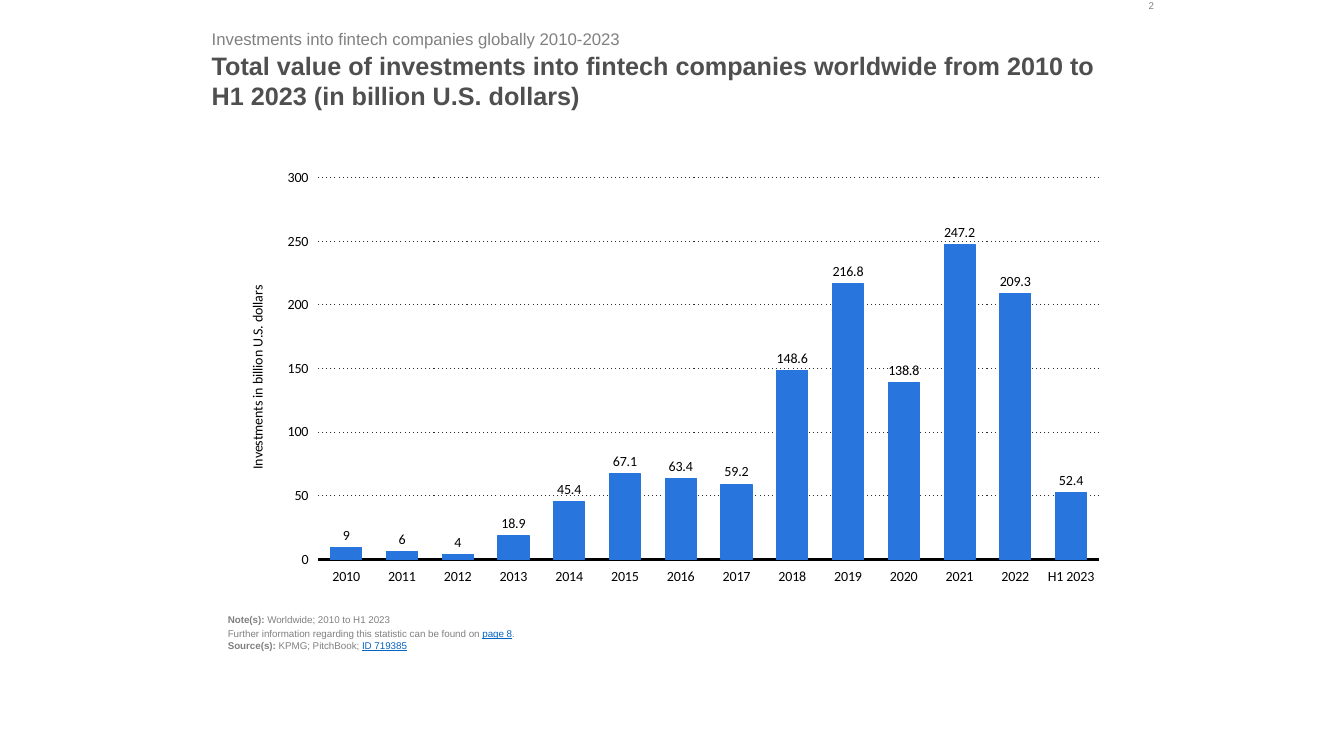
import pptx
import pptx.chart.data
import pptx.dml.color
import pptx.enum.chart
import pptx.enum.dml
import pptx.enum.text
import pptx.util

Pt = pptx.util.Pt
ALIGN = pptx.enum.text.PP_ALIGN
ANCHOR = pptx.enum.text.MSO_ANCHOR

COLORS = {
    "title": "4F4F4F",
    "muted": "808080",
    "link": "0563C1",
    "bar": "2876DD",
    "grid": "2F2F2F",
    "axis": "000000",
}
INVESTMENTS = {
    "2010": 9, "2011": 6, "2012": 4, "2013": 18.9, "2014": 45.4,
    "2015": 67.1, "2016": 63.4, "2017": 59.2, "2018": 148.6, "2019": 216.8,
    "2020": 138.8, "2021": 247.2, "2022": 209.3, "H1 2023": 52.4,
}
# Each footnote line is a list of (text, style) pieces
FOOTNOTES = [
    [("Note(s):", "bold"), (" Worldwide; 2010 to H1 2023", "")],
    [("Further information regarding this statistic can be found on ", ""),
     ("page 8", "link"), (".", "")],
    [("Source(s): ", "bold"), ("KPMG; PitchBook; ", ""), ("ID 719385", "link")],
]


def rgb(name):
    return pptx.dml.color.RGBColor.from_string(COLORS[name])


def style_font(font, size, color, name="Arial", bold=False):
    font.name = name
    font.size = Pt(size)
    font.bold = bold
    font.color.rgb = rgb(color)


def place(shape, left, top, width, height):
    shape.left, shape.top = Pt(left), Pt(top)
    shape.width, shape.height = Pt(width), Pt(height)


def prepare_frame(frame, anchor=ANCHOR.TOP):
    frame.word_wrap = True
    frame.auto_size = pptx.enum.text.MSO_AUTO_SIZE.NONE
    frame.vertical_anchor = anchor
    frame.margin_left = frame.margin_right = 0
    frame.margin_top = frame.margin_bottom = 0


def set_title(slide, text):
    title = slide.shapes.title
    place(title, 151.2, 36, 646.6, 67.7)
    prepare_frame(title.text_frame)
    title.text_frame.text = text
    paragraph = title.text_frame.paragraphs[0]
    paragraph.alignment = ALIGN.LEFT
    style_font(paragraph.font, 18, "title", bold=True)


def add_text(slide, box, lines, size, align=ALIGN.LEFT, anchor=ANCHOR.TOP):
    frame = slide.shapes.add_textbox(*(Pt(length) for length in box)).text_frame
    prepare_frame(frame, anchor)
    for index, pieces in enumerate(lines):
        paragraph = frame.add_paragraph() if index else frame.paragraphs[0]
        paragraph.alignment = align
        if index == 0:
            paragraph.space_after = Pt(0.2 * size)
        style_font(paragraph.font, size, "muted")
        for text, style in pieces:
            run = paragraph.add_run()
            run.text = text
            if style == "bold":
                run.font.bold = True
            elif style == "link":
                run.font.underline = True
                run.font.color.rgb = rgb("link")


def style_axis(axis):
    axis.major_tick_mark = axis.minor_tick_mark = pptx.enum.chart.XL_TICK_MARK.NONE
    axis.tick_label_position = pptx.enum.chart.XL_TICK_LABEL_POSITION.LOW
    style_font(axis.tick_labels.font, 10, "axis", "Calibri")


def style_value_axis(axis, title):
    style_axis(axis)
    axis.minimum_scale, axis.maximum_scale, axis.major_unit = 0, 300, 50
    axis.tick_labels.number_format = "#,##0"
    axis.tick_labels.number_format_is_linked = False
    axis.format.line.fill.background()
    axis.axis_title.text_frame.text = title
    style_font(axis.axis_title.text_frame.paragraphs[0].font, 10, "axis", "Calibri")

    # Gridlines: the sparse "dot" dash has no enum member
    grid = axis.major_gridlines.format.line
    grid.color.rgb = rgb("grid")
    grid.width = Pt(0.75)
    grid.dash_style = pptx.enum.dml.MSO_LINE.ROUND_DOT
    for dash in axis._element.xpath("c:majorGridlines//a:prstDash"):
        dash.set("val", "dot")


def add_investment_chart(slide):
    data = pptx.chart.data.CategoryChartData(number_format="General")
    data.categories = list(INVESTMENTS)
    data.add_series("Series 1", list(INVESTMENTS.values()))
    chart = slide.shapes.add_chart(
        pptx.enum.chart.XL_CHART_TYPE.COLUMN_CLUSTERED,
        Pt(162.7), Pt(115.2), Pt(635), Pt(308.9), data).chart
    chart.has_legend = False
    chart.has_title = False
    style_font(chart.font, 18, "axis", "Calibri")

    # Axes
    style_axis(chart.category_axis)
    chart.category_axis.format.line.color.rgb = rgb("axis")
    chart.category_axis.format.line.width = Pt(2)
    style_value_axis(chart.value_axis, "Investments in billion U.S. dollars")

    # Columns and their values
    plot = chart.plots[0]
    plot.vary_by_categories = False
    plot.gap_width, plot.overlap = 80, -30
    columns = plot.series[0]
    columns.invert_if_negative = False
    columns.format.fill.solid()
    columns.format.fill.fore_color.rgb = rgb("bar")
    columns.format.line.color.rgb = rgb("bar")
    columns.format.line.width = Pt(0.75)
    labels = columns.data_labels
    labels.show_value = True
    labels.position = pptx.enum.chart.XL_LABEL_POSITION.OUTSIDE_END
    style_font(labels.font, 10, "axis", "Calibri")


def main():
    deck = pptx.Presentation()
    deck.slide_width, deck.slide_height = Pt(960), Pt(540)
    slide = deck.slides.add_slide(deck.slide_layouts[5])

    # Heading
    set_title(slide, "Total value of investments into fintech companies worldwide "
                     "from 2010 to H1 2023 (in billion U.S. dollars)")
    add_text(slide, (151.2, 20.2, 646.6, 20.2),
             [[("Investments into fintech companies globally 2010-2023", "")]], 12)

    # Footnotes, chart and page number
    add_text(slide, (162.7, 423.4, 635, 41.8), FOOTNOTES, 7, anchor=ANCHOR.BOTTOM)
    add_investment_chart(slide)
    add_text(slide, (789.8, 0, 34.6, 15.8), [[("2", "")]], 7, align=ALIGN.RIGHT)

    deck.save("out.pptx")


if __name__ == "__main__":
    main()
